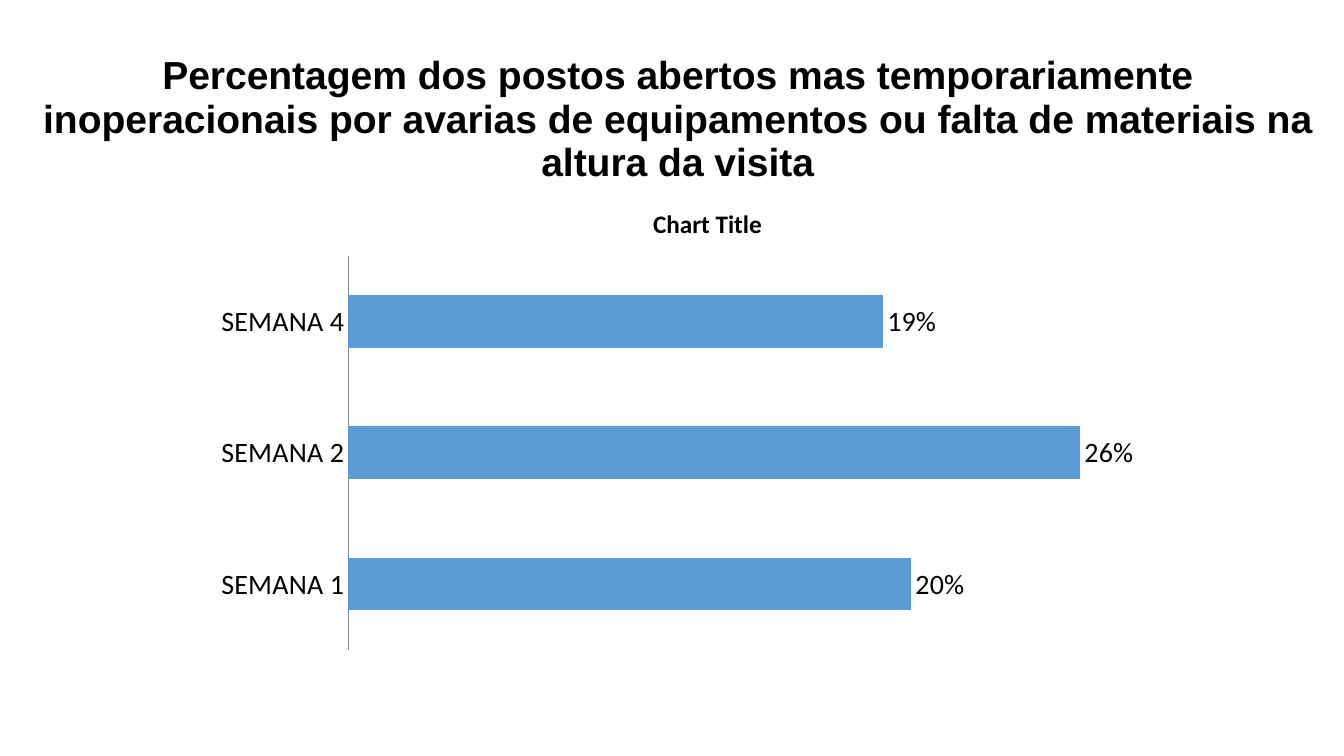
from pptx import Presentation
from pptx.chart.data import CategoryChartData
from pptx.dml.color import RGBColor
from pptx.enum.chart import XL_CHART_TYPE, XL_LABEL_POSITION, XL_TICK_MARK
from pptx.enum.text import MSO_ANCHOR, MSO_AUTO_SIZE, PP_ALIGN
from pptx.oxml import parse_xml
from pptx.oxml.ns import nsdecls
from pptx.util import Cm, Pt

BAR_CLUSTERED = XL_CHART_TYPE.BAR_CLUSTERED
OUTSIDE_END = XL_LABEL_POSITION.OUTSIDE_END
NO_TICKS = XL_TICK_MARK.NONE
MIDDLE = MSO_ANCHOR.MIDDLE
NO_AUTOFIT = MSO_AUTO_SIZE.NONE
CENTER = PP_ALIGN.CENTER

BLACK = RGBColor(0x00, 0x00, 0x00)
BLUE = RGBColor(0x5B, 0x9B, 0xD5)
GRAY = RGBColor(0x86, 0x86, 0x86)

TITLE_BOX = (Cm(0.71), Cm(0.97), Cm(32.74), Cm(3.73))
CHART_BOX = (Cm(5.08), Cm(4.7), Cm(25.5), Cm(11.91))
PLOT_LAYOUT = {"x": 0.145, "y": 0.147, "w": 0.835, "h": 0.833}

TITLE = (
    "Percentagem dos postos abertos mas temporariamente inoperacionais "
    "por avarias de equipamentos ou falta de materiais na altura da visita"
)
WEEKS = {"SEMANA 1": 0.2, "SEMANA 2": 0.26, "SEMANA 4": 0.19}


def style_font(font, name, size, bold=False):
    font.name = name
    font.size = Pt(size)
    font.bold = bold
    font.color.rgb = BLACK


def fill_title(title, box):
    title.left, title.top, title.width, title.height = box
    frame = title.text_frame
    frame.text = TITLE
    frame.word_wrap = True
    frame.auto_size = NO_AUTOFIT
    frame.vertical_anchor = MIDDLE
    frame.margin_top = Cm(0.51)
    para = frame.paragraphs[0]
    para.alignment = CENTER
    para.line_spacing = 0.93
    style_font(para.runs[0].font, "Arial", 27.9, True)


def fix_plot_layout(chart):
    modes = '<c:layoutTarget val="inner"/><c:xMode val="edge"/><c:yMode val="edge"/>'
    sizes = "".join(f'<c:{key} val="{value}"/>' for key, value in PLOT_LAYOUT.items())
    layout = parse_xml(
        f'<c:layout {nsdecls("c")}><c:manualLayout>{modes}{sizes}</c:manualLayout></c:layout>'
    )
    plot_area = chart.plots[0]._element.getparent()
    for old_layout in plot_area.findall(layout.tag):
        plot_area.remove(old_layout)
    plot_area.insert(0, layout)


def add_week_chart(slide, box):
    chart_data = CategoryChartData(number_format="0%")
    chart_data.categories = list(WEEKS)
    chart_data.add_series("Series 1", list(WEEKS.values()))
    chart = slide.shapes.add_chart(BAR_CLUSTERED, *box, chart_data).chart
    style_font(chart.font, "Calibri", 10)
    chart.has_legend = False
    chart.has_title = True
    chart_title = chart.chart_title.text_frame
    chart_title.text = "Chart Title"
    style_font(chart_title.paragraphs[0].runs[0].font, "Calibri", 18, True)

    weeks = chart.category_axis
    weeks.major_tick_mark = NO_TICKS
    weeks.format.line.color.rgb = GRAY
    weeks.format.line.width = Pt(0.75)
    style_font(weeks.tick_labels.font, "Calibri", 20)
    shares = chart.value_axis
    shares.visible = False
    shares.has_major_gridlines = False
    shares.minimum_scale = 0
    shares.maximum_scale = 0.3

    plot = chart.plots[0]
    plot.gap_width = 150
    plot.vary_by_categories = False
    bars = plot.series[0]
    bars.format.fill.solid()
    bars.format.fill.fore_color.rgb = BLUE
    labels = bars.data_labels
    labels.show_value = True
    labels.number_format = "0%"
    labels.number_format_is_linked = False
    labels.position = OUTSIDE_END
    style_font(labels.font, "Calibri", 20)
    fix_plot_layout(chart)


def main():
    deck = Presentation()
    deck.slide_width, deck.slide_height = Cm(33.87), Cm(19.05)
    page = deck.slides.add_slide(deck.slide_layouts[5])
    fill_title(page.shapes.title, TITLE_BOX)
    add_week_chart(page, CHART_BOX)
    deck.save("out.pptx")


if __name__ == "__main__":
    main()
